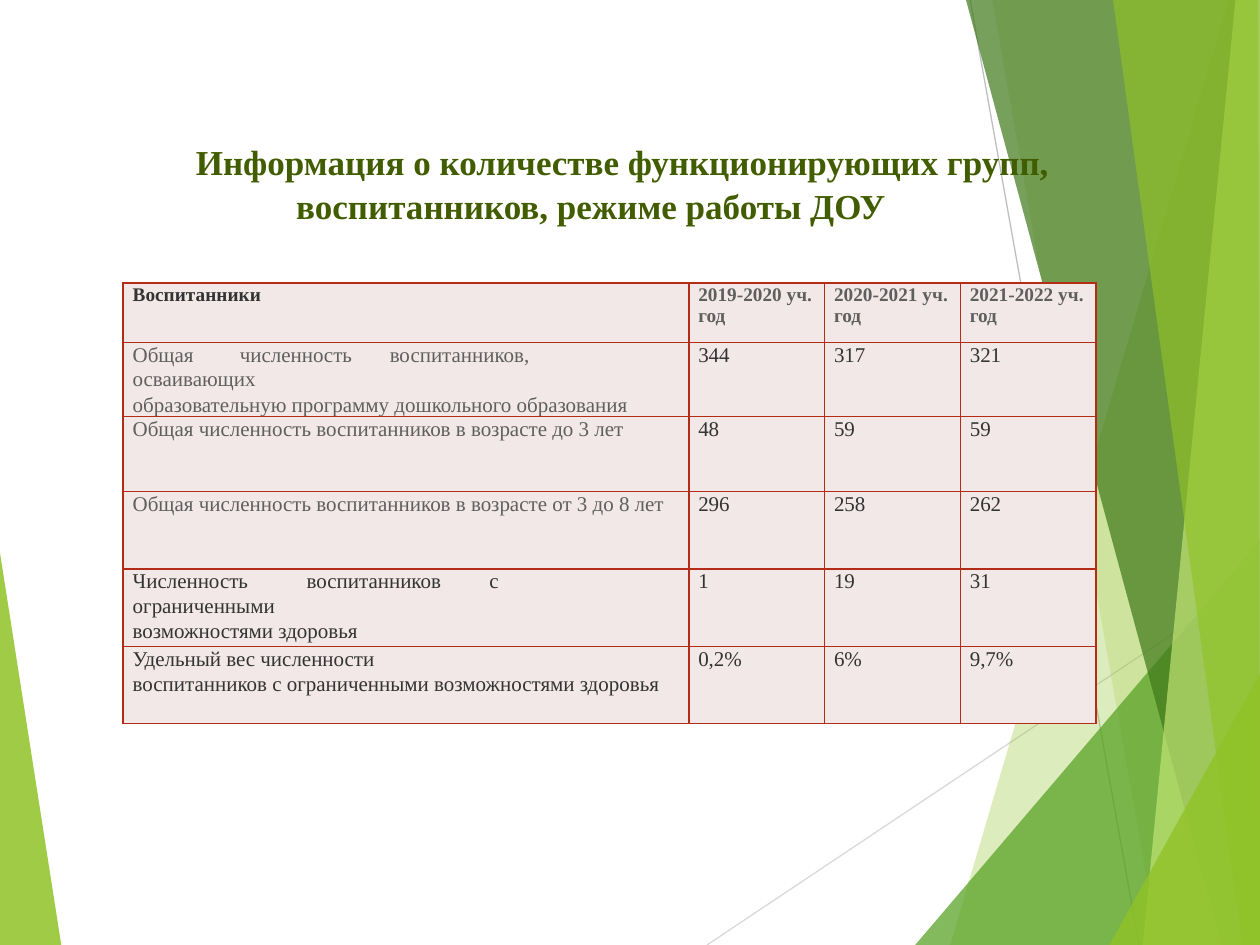
"""Builds a slide with a table of kindergarten pupil numbers over three school years."""
import pptx
import pptx.dml.color
import pptx.enum.shapes
import pptx.enum.text
import pptx.oxml.ns
import pptx.oxml.xmlchemy
import pptx.util

Pt = pptx.util.Pt
RGB = pptx.dml.color.RGBColor
qn = pptx.oxml.ns.qn
SubElement = pptx.oxml.xmlchemy.OxmlElement

LIME = RGB(0x90, 0xC2, 0x26)
GREEN = RGB(0x54, 0xA0, 0x21)
DARK_GREEN = RGB(0x3F, 0x78, 0x19)
PALE_LIME = RGB(0xC0, 0xE4, 0x74)
SILVER = RGB(0xD9, 0xD9, 0xD9)
GRAY = RGB(0xBF, 0xBF, 0xBF)
TITLE_GREEN = RGB(0x42, 0x5D, 0x00)
INK = RGB(0x33, 0x33, 0x33)
SOFT_INK = RGB(0x5F, 0x5F, 0x5F)
CELL_PINK = RGB(0xF1, 0xE8, 0xE7)
BORDER_RED = RGB(0xB3, 0x2C, 0x16)
FONT = "Times New Roman"

WIDTH, HEIGHT = 720, 540

LEFT_FACET = ([(0, 316), (35.3, 540), (0, 540)], LIME, 85)
LINES = [
    ((404, 540), (720, 329), SILVER),
    ((554.4, 0), (650.9, 540), GRAY),
]
RIGHT_FACETS = [
    ([(702, 0), (543, 540), (720, 540), (720, 0)], LIME, 30),
    ([(567.4, 0), (661.7, 540), (720, 540), (720, 0)], LIME, 20),
    ([(522.7, 540), (720, 308.9), (720, 540)], GREEN, 72),
    ([(552.2, 0), (698.4, 540), (720, 540), (720, 0)], DARK_GREEN, 70),
    ([(706.3, 0), (653, 540), (720, 540), (720, 0)], PALE_LIME, 70),
    ([(635.8, 0), (709.9, 540), (720, 540), (718.6, 0)], LIME, 65),
    ([(634.3, 540), (720, 385.2), (720, 540)], LIME, 80),
]

TITLE = [
    ("Информация о количестве функционирующих групп,", 0),
    ("воспитанников, режиме работы ДОУ", 36),
]

TABLE_LEFT, TABLE_TOP = 70.4, 161.8
COL_WIDTHS = [323.2, 77.6, 77.6, 77.6]
CELL_INDENT = 5.4
ROWS = [
    (33.9, INK, [], ["Воспитанники", "2019-2020 уч.\nгод", "2020-2021 уч.\nгод", "2021-2022 уч.\nгод"]),
    (39.5, SOFT_INK, [61.2, 146.9, 247.7],
     ["Общая\tчисленность\tвоспитанников,\tосваивающих\n"
      "образовательную программу дошкольного образования", "344", "317", "321"]),
    (42.8, SOFT_INK, [], ["Общая численность воспитанников в возрасте до 3 лет", "48", "59", "59"]),
    (44.2, SOFT_INK, [], ["Общая численность воспитанников в возрасте от 3 до 8 лет", "296", "258", "262"]),
    (44.2, INK, [99.4, 203.8, 236.9],
     ["Численность\tвоспитанников\tс\tограниченными\nвозможностями здоровья", "1", "19", "31"]),
    (44.2, INK, [],
     ["Удельный вес численности\nвоспитанников с ограниченными возможностями здоровья", "0,2%", "6%", "9,7%"]),
]


def add_child(parent, tag, **attrs):
    child = SubElement(tag)
    for name, value in attrs.items():
        child.set(name, str(value))
    parent.append(child)
    return child


def add_facet(s, points, color, opacity):
    builder = s.shapes.build_freeform(*points[0], scale=Pt(1))
    builder.add_line_segments(points[1:], close=True)
    sp = builder.convert_to_shape()
    sp.shadow.inherit = False
    sp.fill.solid()
    sp.fill.fore_color.rgb = color
    add_child(sp.element.find(".//" + qn("a:srgbClr")), "a:alpha", val=opacity * 1000)
    sp.line.fill.background()


def add_line(s, start, end, color):
    line = s.shapes.add_connector(
        pptx.enum.shapes.MSO_CONNECTOR.STRAIGHT, *(Pt(v) for v in start + end))
    line.line.color.rgb = color
    line.line.width = Pt(0.75)
    add_child(line.element.spPr, "a:effectLst")


def set_font(p, size, color, bold):
    p.font.name = FONT
    p.font.size = Pt(size)
    p.font.bold = bold
    p.font.color.rgb = color


def format_title(s):
    sp = s.shapes.title
    s.shapes.element.append(sp.element)
    sp.left, sp.top, sp.width, sp.height = Pt(108.7), Pt(79.2), Pt(494), Pt(50.4)
    tf = sp.text_frame
    tf.word_wrap = True
    tf.auto_size = pptx.enum.text.MSO_AUTO_SIZE.NONE
    tf.vertical_anchor = pptx.enum.text.MSO_ANCHOR.TOP
    tf.margin_left = tf.margin_right = tf.margin_bottom = 0
    tf.margin_top = Pt(1)
    tf.text = "\n".join(text for text, _ in TITLE)
    for p, (_, right_margin) in zip(tf.paragraphs, TITLE):
        p.alignment = pptx.enum.text.PP_ALIGN.CENTER
        p.line_spacing = 1.0
        p.space_before = Pt(1.1)
        set_font(p, 20, TITLE_GREEN, True)
        p._p.get_or_add_pPr().set("marR", str(Pt(right_margin)))


def format_cell(cell, text, color, tabs, header):
    cell.margin_left = cell.margin_right = cell.margin_top = cell.margin_bottom = 0
    cell.text = text
    for i, p in enumerate(cell.text_frame.paragraphs):
        if i == 0:
            p.line_spacing = Pt(12.9 if header else 14)
        elif not header:
            p.space_before = Pt(1.1)
        pPr = p._p.get_or_add_pPr()
        pPr.set("marL", str(Pt(CELL_INDENT)))
        if tabs and i == 0:
            tab_list = add_child(pPr, "a:tabLst")
            for pos in tabs:
                add_child(tab_list, "a:tab", pos=Pt(pos), algn="l")
        set_font(p, 11 if header else 12, color, header)
    tcPr = cell._tc.get_or_add_tcPr()
    for side in ("a:lnL", "a:lnR", "a:lnT", "a:lnB"):
        border = add_child(tcPr, side, w=Pt(1))
        add_child(add_child(border, "a:solidFill"), "a:srgbClr", val=BORDER_RED)
    cell.fill.solid()
    cell.fill.fore_color.rgb = CELL_PINK


def add_pupil_table(s):
    heights = [row[0] for row in ROWS]
    table = s.shapes.add_table(
        len(ROWS), len(COL_WIDTHS), Pt(TABLE_LEFT), Pt(TABLE_TOP),
        Pt(sum(COL_WIDTHS)), Pt(sum(heights))).table
    table.first_row = table.horz_banding = False
    for column, width in zip(table.columns, COL_WIDTHS):
        column.width = Pt(width)
    for r, (height, label_color, tabs, texts) in enumerate(ROWS):
        table.rows[r].height = Pt(height)
        header = r == 0
        value_color = SOFT_INK if header else INK
        for c, text in enumerate(texts):
            label = c == 0
            format_cell(table.cell(r, c), text, label_color if label else value_color,
                        tabs if label else [], header)


def main():
    prs = pptx.Presentation()
    prs.slide_width, prs.slide_height = Pt(WIDTH), Pt(HEIGHT)
    s = prs.slides.add_slide(prs.slide_layouts[5])
    add_facet(s, *LEFT_FACET)
    for line in LINES:
        add_line(s, *line)
    for facet in RIGHT_FACETS:
        add_facet(s, *facet)
    format_title(s)
    add_pupil_table(s)
    prs.save("out.pptx")


if __name__ == "__main__":
    main()
